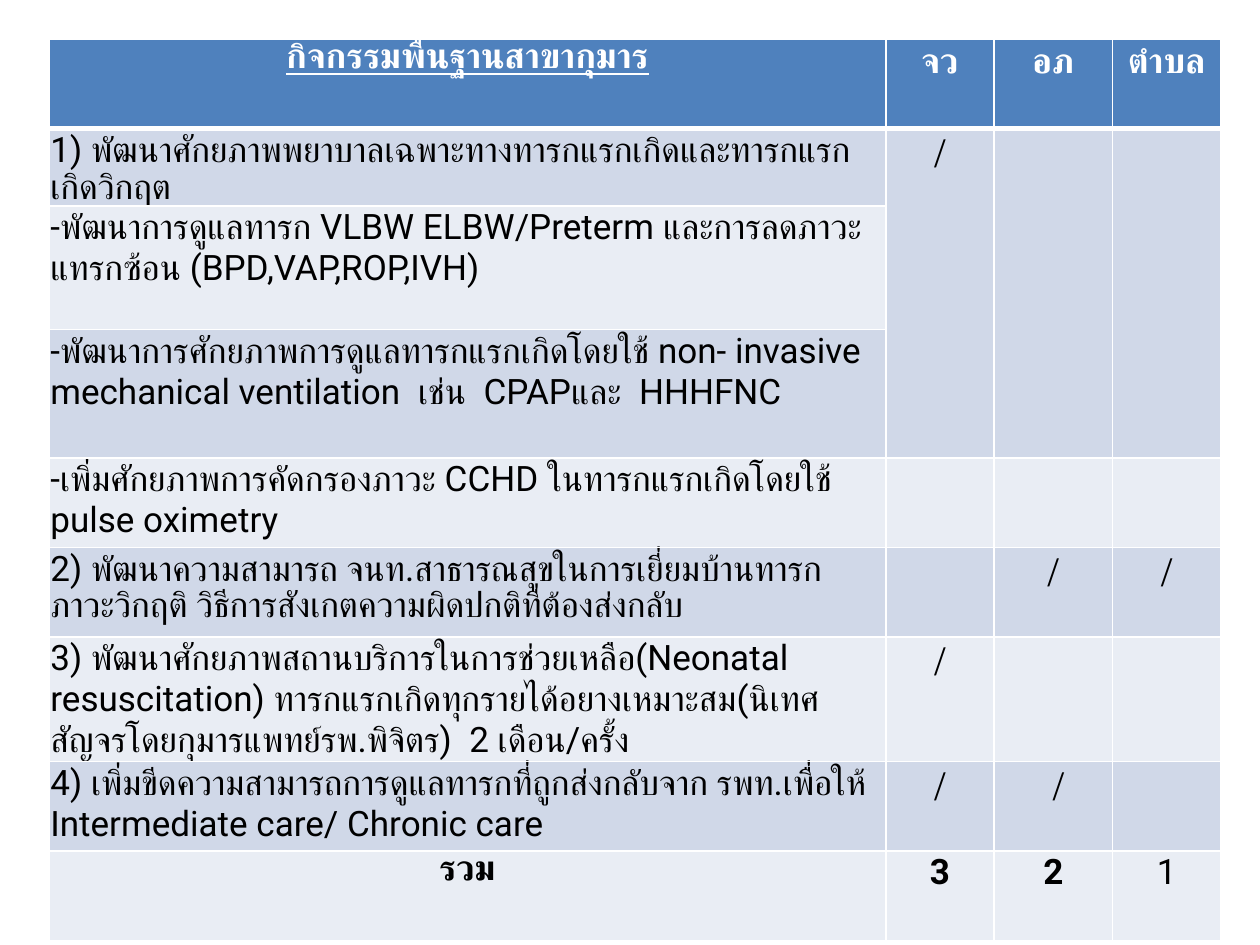
from lxml.etree import SubElement
from pptx import Presentation
from pptx.dml.color import RGBColor
from pptx.enum.text import MSO_ANCHOR, PP_ALIGN
from pptx.oxml.ns import qn
from pptx.util import Inches, Pt

WHITE = RGBColor(0xFF, 0xFF, 0xFF)
BLACK = RGBColor(0, 0, 0)
BLUE = RGBColor(0x4F, 0x81, 0xBD)
BANDS = RGBColor(0xE9, 0xED, 0xF4), RGBColor(0xD0, 0xD8, 0xE8)

COLS = 6.64, 0.86, 0.94, 0.86
ROWS = 0.71, 0.61, 0.98, 1.02, 0.71, 0.71, 0.71, 0.71, 0.71
TIGHT = {"margin_left": 0.01, "margin_top": 0.01, "margin_right": 0.01, "margin_bottom": 0}

BODY = {"name": "Roboto", "size": Pt(20), "bold": False}
HEAD = BODY | {"bold": True}
TITLE = HEAD | {"underline": True}
MARK = BODY | {"name": "Times New Roman", "size": Pt(24)}

DATA = (
    ("กิจกรรมพื้นฐานสาขากุมาร", "จว", "อภ", "ตำบล"),
    ("1) พัฒนาศักยภาพพยาบาลเฉพาะทางทารกแรกเกิดและทารกแรกเกิดวิกฤต", "/", "", ""),
    ("-พัฒนาการดูแลทารก VLBW ELBW/Preterm และการลดภาวะแทรกซ้อน (BPD,VAP,ROP,IVH)", "", "", ""),
    ("-พัฒนาการศักยภาพการดูแลทารกแรกเกิดโดยใช้ non- invasive mechanical ventilation  เช่น  CPAPและ  HHHFNC", "", "", ""),
    ("-เพิ่มศักยภาพการคัดกรองภาวะ CCHD ในทารกแรกเกิดโดยใช้ pulse oximetry", "", "", ""),
    ("2) พัฒนาความสามารถ จนท.สาธารณสุขในการเยี่ยมบ้านทารกภาวะวิกฤติ วิธีการสังเกตความผิดปกติที่ต้องส่งกลับ", "", "/", "/"),
    ("3) พัฒนาศักยภาพสถานบริการในการช่วยเหลือ(Neonatal resuscitation) ทารกแรกเกิดทุกรายได้อยางเหมาะสม(นิเทศสัญจรโดยกุมารแพทย์รพ.พิจิตร)  2 เดือน/ครั้ง", "/", "", ""),
    ("4) เพิ่มขีดความสามารถการดูแลทารกที่ถูกส่งกลับจาก รพท.เพื่อให้ Intermediate care/ Chronic care", "/", "\u00a0/", ""),
    ("รวม", "3", "2", "1"),
)
LAST = len(DATA) - 1


def style(row, col):
    if row == 0:
        return HEAD if col else TITLE
    if row == LAST:
        return BODY if col == 3 else HEAD
    return MARK if col else BODY


def edge(cell, base):
    props = cell._tc.get_or_add_tcPr()
    for side in "LRTB":
        width = base if side == "B" else 1
        line = SubElement(props, qn(f"a:ln{side}"), w=str(Pt(width)))
        fill = SubElement(line, qn("a:solidFill"))
        SubElement(fill, qn("a:srgbClr"), val=str(WHITE))


def paint(cell, color):
    cell.fill.solid()
    cell.fill.fore_color.rgb = color


def write(cell, text, font, color, align):
    para = cell.text_frame.paragraphs[0]
    para.alignment = align
    run = para.add_run()
    run.text = text
    for key, value in font.items():
        setattr(run.font, key, value)
    run.font.color.rgb = color


def fit(cell):
    for key, value in TIGHT.items():
        setattr(cell, key, Inches(value))


def grid(slide):
    frame = slide.shapes.add_table(
        len(ROWS), len(COLS), Inches(0.39), Inches(0.31),
        Inches(sum(COLS)), Inches(sum(ROWS)))
    table = frame.table
    for part, sizes, key in ((table.columns, COLS, "width"), (table.rows, ROWS, "height")):
        for item, size in zip(part, sizes):
            setattr(item, key, Inches(size))
    for col in range(1, len(COLS)):
        table.cell(1, col).merge(table.cell(3, col))
    return table


def main():
    deck = Presentation()
    deck.slide_width, deck.slide_height = Inches(10), Inches(7.5)
    table = grid(deck.slides.add_slide(deck.slide_layouts[6]))
    for row, words in enumerate(DATA):
        for col, text in enumerate(words):
            cell = table.cell(row, col)
            edge(cell, 1 if row else 3)
            paint(cell, BANDS[row % 2] if row else BLUE)
            if not text:
                continue
            if row or not col:
                fit(cell)
            mid = col or row in (0, LAST)
            write(cell, text, style(row, col), BLACK if row else WHITE,
                  PP_ALIGN.CENTER if mid else PP_ALIGN.LEFT)
    table.cell(1, 0).vertical_anchor = MSO_ANCHOR.MIDDLE
    deck.save("out.pptx")


if __name__ == "__main__":
    main()
